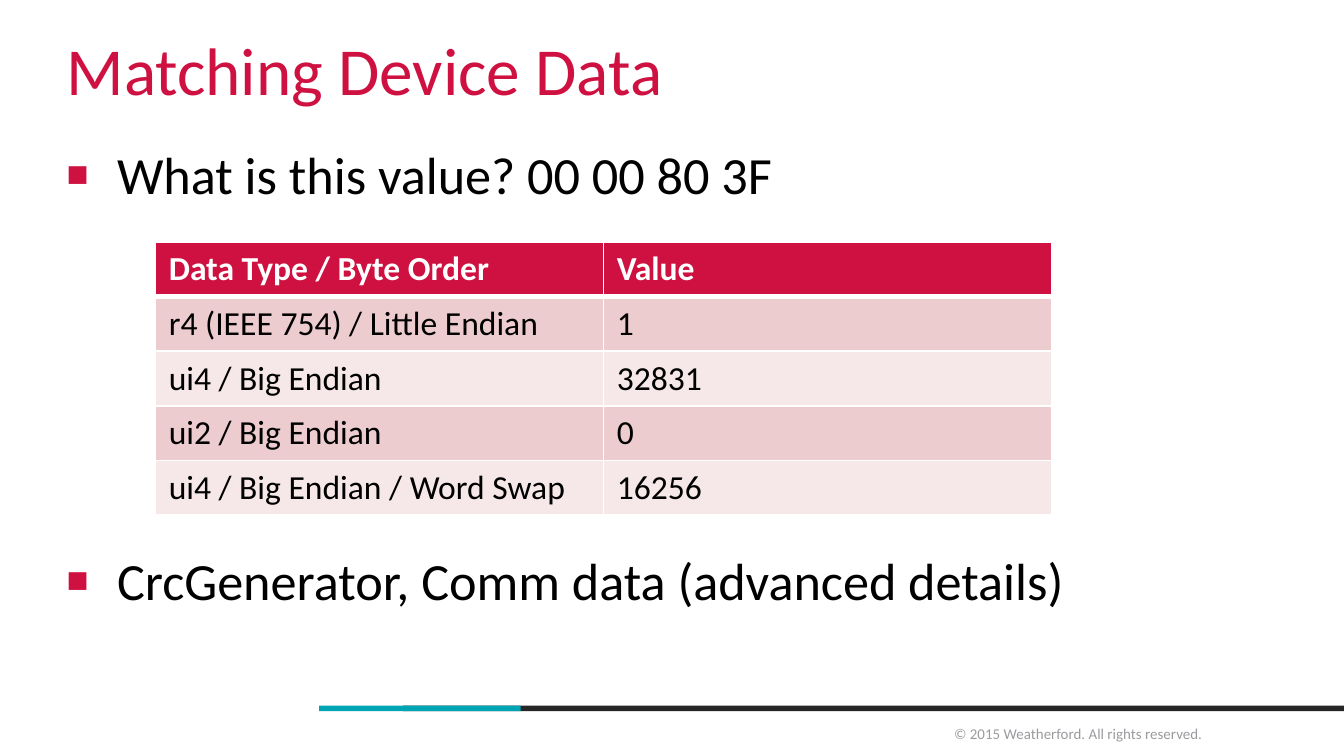
from lxml.etree import SubElement
from pptx import Presentation
from pptx.dml.color import RGBColor
from pptx.enum.shapes import MSO_SHAPE
from pptx.enum.text import MSO_ANCHOR, MSO_AUTO_SIZE, PP_ALIGN
from pptx.oxml import parse_xml
from pptx.oxml.ns import nsdecls, qn
from pptx.util import Pt

PX = 9525
COLORS = {"red": "CE1141", "teal": "00A5B5", "dark": "262626", "gray": "999B9E",
          "black": "000000", "white": "FFFFFF", "band": "EDCCCF", "pale": "F6E7E9"}
ROWS = [("Data Type / Byte Order", "Value"),
        ("r4 (IEEE 754) / Little Endian", "1"),
        ("ui4 / Big Endian", "32831"),
        ("ui2 / Big Endian", "0"),
        ("ui4 / Big Endian / Word Swap", "16256")]


def rgb(name):
    """Return the named colour."""
    return RGBColor.from_string(COLORS[name])


def px(*values):
    """Turn px lengths into EMU."""
    return [v * PX for v in values]


def place(sp, box):
    """Move and size a shape to a px box."""
    sp.left, sp.top, sp.width, sp.height = px(*box)


def write(p, text, size, color="black", bold=False, before=0, line=1.0):
    """Write formatted text into a paragraph."""
    p.alignment = PP_ALIGN.LEFT
    p.space_before = Pt(before)
    p.line_spacing = line
    r = p.add_run()
    r.text = text
    r.font.name = "Calibri"
    r.font.size = Pt(size)
    r.font.bold = bold
    r.font.color.rgb = rgb(color)


def add_bullet(p, indent):
    """Give a paragraph a red square bullet with a hanging indent."""
    pPr = p._p.get_or_add_pPr()
    pPr.set("marL", str(indent * PX))
    pPr.set("indent", str(-indent * PX))
    clr = SubElement(pPr, qn("a:buClr"))
    SubElement(clr, qn("a:srgbClr"), val=COLORS["red"])
    SubElement(pPr, qn("a:buSzPct"), val="70000")
    SubElement(pPr, qn("a:buFont"), typeface="Arial")
    SubElement(pPr, qn("a:buChar"), char="■")


def set_borders(cell, **widths):
    """Draw white cell borders with widths in points for L, R, T and B."""
    tcPr = cell._tc.get_or_add_tcPr()
    for i, (side, width) in enumerate(widths.items()):
        tcPr.insert(i, parse_xml(
            f'<a:ln{side} {nsdecls("a")} w="{Pt(width)}"><a:solidFill>'
            f'<a:srgbClr val="{COLORS["white"]}"/></a:solidFill></a:ln{side}>'))


def add_title(s, box, text):
    """Fill the title placeholder."""
    sp = s.shapes.title
    place(sp, box)
    tf = sp.text_frame
    tf.auto_size = MSO_AUTO_SIZE.NONE
    tf.vertical_anchor = MSO_ANCHOR.TOP
    write(tf.paragraphs[0], text, 36, "red", line=0.9)


def add_body(s, box, items, gap):
    """Fill the body placeholder with bullets set apart by a gap in points."""
    sp = s.placeholders[1]
    place(sp, box)
    tf = sp.text_frame
    tf.auto_size = MSO_AUTO_SIZE.NONE
    tf.vertical_anchor = MSO_ANCHOR.TOP
    for i, text in enumerate(items):
        p = tf.paragraphs[0] if i == 0 else tf.add_paragraph()
        add_bullet(p, 36)
        write(p, text, 28, before=gap if i else 0)


def add_value_table(s, box, rows):
    """Add the banded table of data types and values."""
    tbl = s.shapes.add_table(len(rows), len(rows[0]), *px(*box)).table
    for i, row in enumerate(rows):
        fill = "red" if i == 0 else ("pale", "band")[i % 2]
        for j, text in enumerate(row):
            cell = tbl.cell(i, j)
            set_borders(cell, L=1, R=1, T=3 if i == 1 else 1, B=3 if i == 0 else 1)
            cell.fill.solid()
            cell.fill.fore_color.rgb = rgb(fill)
            write(cell.text_frame.paragraphs[0], text, 18,
                  "black" if i else "white", bold=i == 0)


def add_footer(s, box, text):
    """Add the two-colour rule and the copyright line below it."""
    x, y, w, h = box
    for left, width, color in ((60, w - 60, "dark"), (0, 144, "teal")):
        sp = s.shapes.add_shape(MSO_SHAPE.RECTANGLE, *px(x + left, y, width, 4))
        sp.shadow.inherit = False
        sp.fill.solid()
        sp.fill.fore_color.rgb = rgb(color)
        sp.line.fill.background()
    tf = s.shapes.add_textbox(*px(x + 444, y + 9, 199, h - 9)).text_frame
    tf.word_wrap = False
    tf.auto_size = MSO_AUTO_SIZE.SHAPE_TO_FIT_TEXT
    write(tf.paragraphs[0], text, 8, "gray")


def main():
    """Build the slide and save it."""
    prs = Presentation()
    prs.slide_width, prs.slide_height = px(960, 540)
    s = prs.slides.add_slide(prs.slide_layouts[1])
    add_footer(s, (228, 504, 732, 32), "© 2015 Weatherford. All rights reserved.")
    add_title(s, (38, 22, 816, 65), "Matching Device Data")
    add_body(s, (38, 97, 883, 390),
             ["What is this value? 00 00 80 3F",
              "CrcGenerator, Comm data (advanced details)"], gap=184)
    add_value_table(s, (111, 173, 640, 195), ROWS)
    prs.save("out.pptx")


if __name__ == "__main__":
    main()
